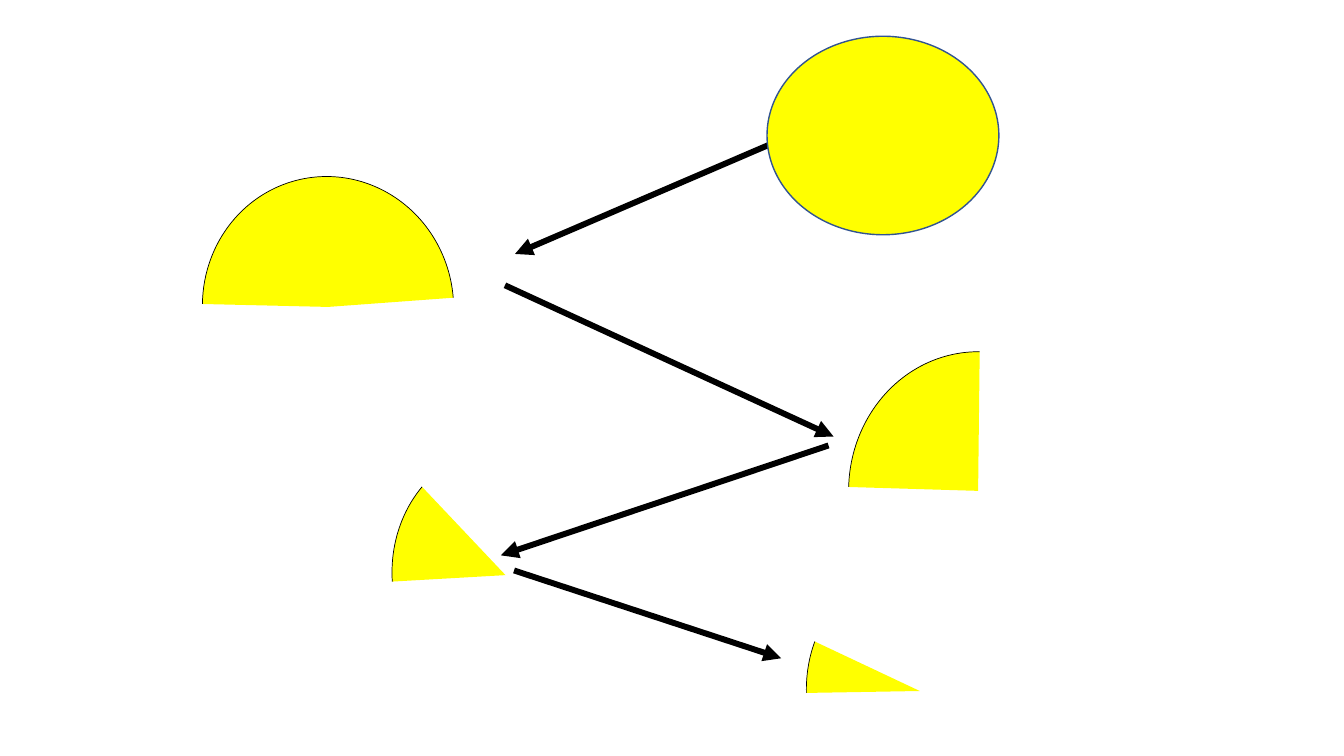
from lxml import etree
from pptx import Presentation
from pptx.dml.color import RGBColor
from pptx.enum.shapes import MSO_CONNECTOR, MSO_SHAPE
from pptx.oxml.ns import qn
from pptx.util import Pt

STRAIGHT = MSO_CONNECTOR.STRAIGHT
OVAL = MSO_SHAPE.OVAL
ARC = MSO_SHAPE.ARC

COLORS = {"disc": "FFFF00", "rim": "325491", "ink": "000000"}
ADJUSTMENT_PER_DEGREE = 0.6

ARROWS_BEHIND = [
    ((552.2, 102.2), (367.9, 181.4)),
    ((360.7, 203.8), (595.4, 311.8)),
]
ARROWS_IN_FRONT = [
    ((591.8, 318.2), (357.8, 396.7)),
    ((367.2, 407.5), (558, 470.2)),
]
WHOLE = (547.9, 25.9, 165.6, 141.8)
SECTORS = [
    ((144.7, 126, 179.3, 186.5), 351.5, (189.84, 4.3)),
    ((606.2, 251.3, 185, 198.7), 0, (181.71, 270.66)),
    ((280.1, 319.7, 162, 182.2), 355, (181.71, 231.59)),
    ((576, 402.5, 162, 182.2), 357.3, (181.71, 207.91)),
]


def rgb(name):
    return RGBColor.from_string(COLORS[name])


def style_line(line, color, width):
    line.color.rgb = rgb(color)
    line.width = Pt(width)


def add_piece(slide, preset, box, outline, width):
    piece = slide.shapes.add_shape(preset, *map(Pt, box))
    piece.shadow.inherit = False
    piece.fill.solid()
    piece.fill.fore_color.rgb = rgb("disc")
    style_line(piece.line, outline, width)
    return piece


def add_sector(slide, box, rotation, angles):
    sector = add_piece(slide, ARC, box, "ink", 0.5)
    sector.rotation = rotation
    for index, angle in enumerate(angles):
        sector.adjustments[index] = angle * ADJUSTMENT_PER_DEGREE


def add_arrow(slide, start, end):
    arrow = slide.shapes.add_connector(STRAIGHT, *map(Pt, start + end))
    style_line(arrow.line, "ink", 4.25)
    properties = arrow._element.spPr
    outline = properties.find(qn("a:ln"))
    etree.SubElement(outline, qn("a:tailEnd"), type="triangle")
    etree.SubElement(properties, qn("a:effectLst"))


def main():
    presentation = Presentation()
    presentation.slide_width = Pt(960)
    presentation.slide_height = Pt(540)
    slide = presentation.slides.add_slide(presentation.slide_layouts[6])

    for start, end in ARROWS_BEHIND:
        add_arrow(slide, start, end)
    add_piece(slide, OVAL, WHOLE, "rim", 1)
    for box, rotation, angles in SECTORS:
        add_sector(slide, box, rotation, angles)
    for start, end in ARROWS_IN_FRONT:
        add_arrow(slide, start, end)

    presentation.save("out.pptx")


if __name__ == "__main__":
    main()
